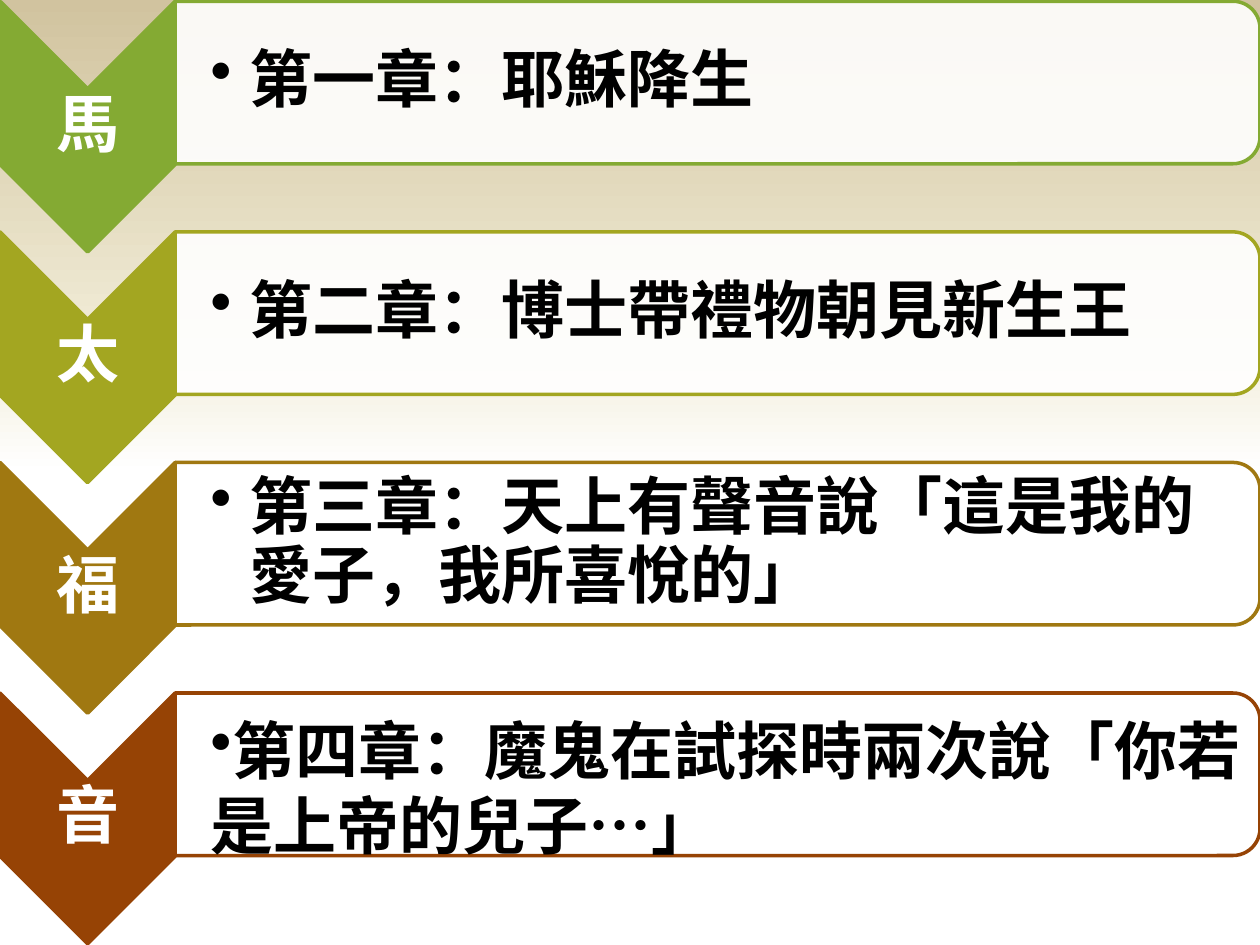
import lxml.etree
import pptx
import pptx.dml.color
import pptx.enum.shapes
import pptx.enum.text
import pptx.oxml
import pptx.oxml.ns
import pptx.util

Inches = pptx.util.Inches
Shapes = pptx.enum.shapes.MSO_SHAPE
qn = pptx.oxml.ns.qn

COLORS = {
    "white": "FFFFFF", "black": "000000", "cream": "F0EBD5", "sand": "D1C39F",
    "green": "84AA33", "olive": "A3A621", "ochre": "A07811", "rust": "964305",
}
FONT = "Noto Sans CJK SC"
CHAPTERS = [
    ("馬", "第一章：耶穌降生", "green"),
    ("太", "第二章：博士帶禮物朝見新生王", "olive"),
    ("福", "第三章：天上有聲音說「這是我的愛子，我所喜悅的」", "ochre"),
    ("音", "第四章：魔鬼在試探時兩次說「你若是上帝的兒子…」", "rust"),
]
FIRST_TOP, ROW_PITCH = 0.01, 1.83
CHEVRON_WIDTH, CHEVRON_HEIGHT = 1.39, 1.99
PANEL_WIDTH, PANEL_HEIGHT = 8.61, 1.29


def rgb(color):
    """Return the named colour."""
    return pptx.dml.color.RGBColor.from_string(COLORS[color])


def paint_background(slide):
    """Fade the slide from sand at the top to white at its middle."""
    fill = slide.background.fill
    fill.gradient()
    gradient = slide.background._cSld.find(".//" + qn("a:gradFill"))
    stops = gradient.find(qn("a:gsLst"))
    for stop in list(stops):
        stops.remove(stop)
    for position, color in ((0, "white"), (50, "white"), (65, "cream"), (100, "sand")):
        stop = lxml.etree.SubElement(stops, qn("a:gs"), pos=str(position * 1000))
        lxml.etree.SubElement(stop, qn("a:srgbClr"), val=COLORS[color])
    fill.gradient_angle = 90


def add_turned_shape(slide, preset, left, top, width, height, fill, line):
    """Add a shape turned by 90 degrees that covers the given box."""
    shape = slide.shapes.add_shape(
        preset,
        Inches(left + (width - height) / 2), Inches(top + (height - width) / 2),
        Inches(height), Inches(width))
    shape.rotation = 90
    shape.shadow.inherit = False
    shape.fill.solid()
    shape.fill.fore_color.rgb = rgb(fill)
    shape.line.color.rgb = rgb(line)
    shape.line.width = pptx.util.Pt(2)
    return shape


def add_label(slide, left, top, width, height, text, color, indent=0.03, drop=0.0):
    """Add a bold, vertically centred line of text and return its paragraph."""
    frame = slide.shapes.add_textbox(
        Inches(left), Inches(top), Inches(width), Inches(height)).text_frame
    frame.word_wrap = True
    frame.vertical_anchor = pptx.enum.text.MSO_ANCHOR.MIDDLE
    frame.margin_left = Inches(indent)
    frame.margin_right = frame.margin_bottom = Inches(0.03)
    frame.margin_top = Inches(0.03 + drop)
    frame.text = text
    paragraph = frame.paragraphs[0]
    paragraph.line_spacing = 0.9
    font = paragraph.runs[0].font
    font.name, font.size, font.bold = FONT, pptx.util.Pt(36), True
    font.color.rgb = rgb(color)
    lxml.etree.SubElement(font._element, qn("a:ea"), typeface=FONT)
    return paragraph


def add_bullet(paragraph, hanging):
    """Give the paragraph a bullet with the given hanging indent in inches."""
    paragraph.level = 1
    properties = paragraph._p.get_or_add_pPr()
    properties.set("marL", str(Inches(hanging)))
    properties.set("indent", str(-Inches(hanging)))
    lxml.etree.SubElement(properties, qn("a:buChar"), char="•")


def add_chevron(slide, left, top, width, height, syllable, color):
    """Draw the downward chevron with its character."""
    add_turned_shape(slide, Shapes.CHEVRON, left, top, width, height, color, color)
    label = add_label(slide, left, top + width / 2, width, height - width, syllable, "white")
    label.alignment = pptx.enum.text.PP_ALIGN.CENTER


def add_panel(slide, left, top, width, height, chapter, color, last):
    """Draw the translucent panel with its bulleted chapter."""
    panel = add_turned_shape(
        slide, Shapes.ROUND_2_SAME_RECTANGLE, left, top, width, height, "white", color)
    white = panel._element.spPr.find(qn("a:solidFill"))[0]
    lxml.etree.SubElement(white, qn("a:alpha"), val="90000")
    label = add_label(slide, left, top + 0.06, width - 0.06, height - 0.12,
                      chapter, "black", indent=0.28, drop=0.2 if last else 0)
    if last:
        label.line_spacing = 1.0
    add_bullet(label, 0 if last else 0.31)


def main():
    """Build the slide of four chapters."""
    deck = pptx.Presentation()
    deck.slide_width, deck.slide_height = Inches(10), Inches(7.5)
    slide = deck.slides.add_slide(deck.slide_layouts[6])
    paint_background(slide)
    for row, (syllable, chapter, color) in enumerate(CHAPTERS):
        top = FIRST_TOP + row * ROW_PITCH
        add_chevron(slide, 0, top, CHEVRON_WIDTH, CHEVRON_HEIGHT, syllable, color)
        add_panel(slide, CHEVRON_WIDTH, top, PANEL_WIDTH, PANEL_HEIGHT,
                  chapter, color, row == len(CHAPTERS) - 1)
    deck.save("out.pptx")


if __name__ == "__main__":
    main()
